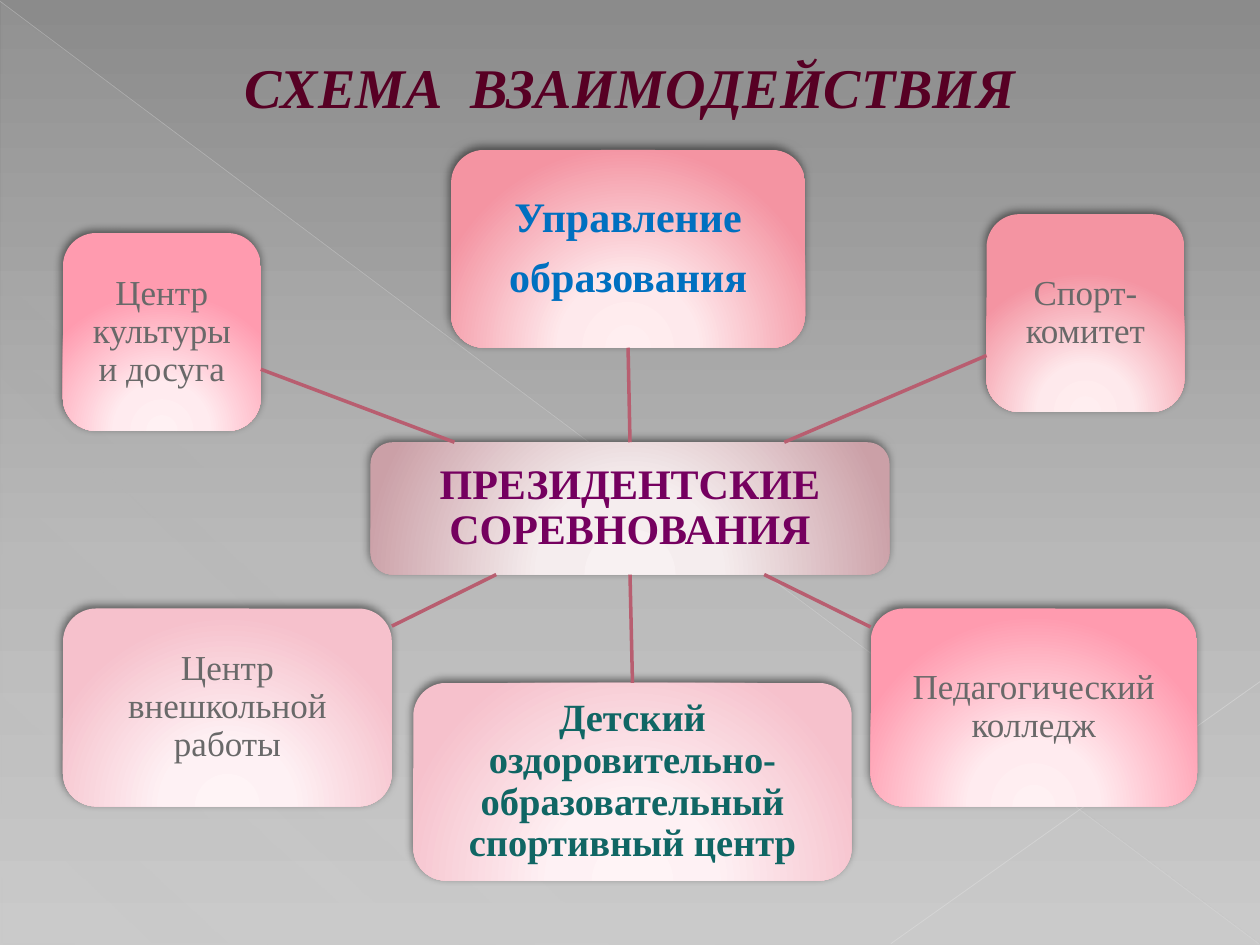
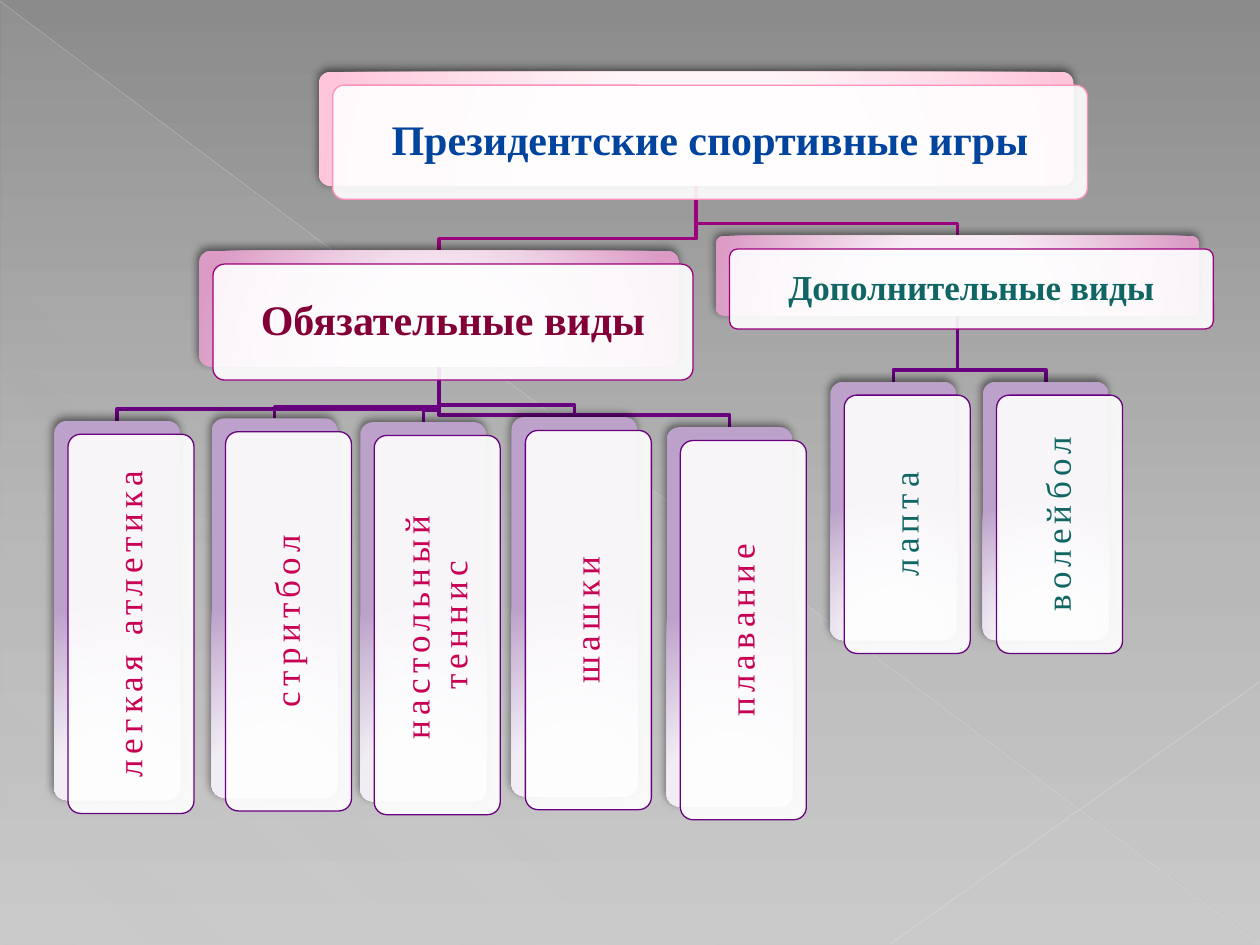
from dataclasses import dataclass

from lxml.etree import SubElement
from pptx import Presentation
from pptx.dml.color import RGBColor
from pptx.enum.shapes import MSO_CONNECTOR as Link, MSO_SHAPE as Preset
from pptx.enum.text import MSO_ANCHOR as Anchor, PP_ALIGN as Align
from pptx.oxml import parse_xml
from pptx.oxml.ns import nsdecls, qn
from pptx.util import Inches, Pt

SLIDE_W, SLIDE_H = Inches(10), Inches(7.5)
COLUMNS, ROWS = 100, 75
COL, ROW = SLIDE_W / COLUMNS, SLIDE_H / ROWS
FONT = "Times New Roman"

WHITE = RGBColor(0xFF, 0xFF, 0xFF)
BLACK = RGBColor(0, 0, 0)
GREY_TOP = RGBColor(0x8B, 0x8B, 0x8B)
GREY_MIDDLE = RGBColor(0xB8, 0xB8, 0xB8)
GREY_BOTTOM = RGBColor(0xCA, 0xCA, 0xCA)
VEIL = RGBColor(0xD2, 0xD2, 0xD2)
LONG_RAY = RGBColor(0xDF, 0xDF, 0xDF)
SHORT_RAY = RGBColor(0xE2, 0xE2, 0xE2)
TITLE_WINE = RGBColor(0x57, 0x00, 0x24)
TITLE_EDGE = RGBColor(0xB1, 0x64, 0x84)
SPOKE_ROSE = RGBColor(0xB8, 0x5E, 0x70)
TEXT_GREY = RGBColor(0x69, 0x69, 0x69)
HUB_PLUM = RGBColor(0x75, 0x00, 0x5F)
BLUE = RGBColor(0x00, 0x70, 0xC0)
TEAL = RGBColor(0x10, 0x66, 0x64)
NAVY = RGBColor(0x00, 0x44, 0x9E)
CLARET = RGBColor(0x82, 0x00, 0x37)
CRIMSON = RGBColor(0xC8, 0x00, 0x53)
ROOT_EDGE = RGBColor(0xFF, 0x90, 0xBE)
BRANCH_EDGE = RGBColor(0x9C, 0x00, 0x7F)
LEAF_EDGE = RGBColor(0x68, 0x00, 0x7F)


def glow(*hex_stops):
    return list(zip((0, 34, 100), map(RGBColor.from_string, hex_stops), (100,) * 3))


HUB_GLOW = glow("F8F1F2", "F5EDEE", "CBA0A7")
CORAL_GLOW = glow("FFEEF0", "FEE9EC", "F494A2")
PINK_GLOW = glow("FFF1F3", "FFEBEF", "FF9BAF")
PALE_GLOW = glow("FFF4F6", "FEF1F4", "F6C1CC")
ROOT_GLOW = glow("FFF7F9", "FFF4F7", "FFC6DB")
BRANCH_GLOW = glow("FBF0F7", "F8ECF4", "DB9BC5")
LEAF_GLOW = glow("F6F1F8", "F2EDF5", "BCA1CA")


@dataclass
class Box:
    """A rectangle in grid columns and rows."""
    left: float
    top: float
    width: float
    height: float

    @property
    def center(self):
        return self.left + self.width / 2, self.top + self.height / 2

    @property
    def bottom(self):
        return self.top + self.height

    def inside(self, area):
        return self.shifted(area.left, area.top)

    def shifted(self, dx, dy):
        return Box(self.left + dx, self.top + dy, self.width, self.height)

    def emu(self):
        return (*grid_point(self.left, self.top), *grid_point(self.width, self.height))

    def edge_toward(self, other):
        """Where the line to the other box's centre leaves this box."""
        (x, y), (other_x, other_y) = self.center, other.center
        dx, dy = other_x - x, other_y - y
        share = 1 / max(abs(dx) / (self.width / 2), abs(dy) / (self.height / 2))
        return x + dx * share, y + dy * share


@dataclass
class Label:
    lines: tuple
    size: int
    color: RGBColor
    bold: bool = False
    inset: float = 0.06
    upright: bool = False


def grid_point(column, row):
    return round(column * COL), round(row * ROW)


def gradient(stops, angle=None):
    """Linear gradient at an angle, or a circular one rising from below."""
    marks = "".join(
        f'<a:gs pos="{pos * 1000}"><a:srgbClr val="{color}">'
        f'<a:alpha val="{alpha * 1000}"/></a:srgbClr></a:gs>'
        for pos, color, alpha in stops)
    if angle is None:
        course = ('<a:path path="circle"><a:fillToRect l="50000" t="155000" '
                  'r="50000" b="-55000"/></a:path>')
    else:
        course = f'<a:lin ang="{angle * 60000}" scaled="0"/>'
    return parse_xml(f'<a:gradFill {nsdecls("a")} rotWithShape="1">'
                     f'<a:gsLst>{marks}</a:gsLst>{course}</a:gradFill>')


def fill_gradient(owner, part, stops, angle=None):
    """Fill a shape (part p:spPr) or a master background (part p:bgPr)."""
    owner.fill.background()
    return part.replace(part.find(qn("a:noFill")), gradient(stops, angle))


def set_opacity(part, percent):
    color = part.find(".//" + qn("a:srgbClr"))
    SubElement(color, qn("a:alpha"), val=str(percent * 1000))


def add_line(slide, start, end, color, width):
    line = slide.shapes.add_connector(Link.STRAIGHT, *grid_point(*start), *grid_point(*end))
    line.line.color.rgb = color
    line.line.width = Pt(width)
    SubElement(line.element.spPr, qn("a:effectLst"))
    return line


def add_glowing_panel(slide, box, stops, corner):
    panel = slide.shapes.add_shape(Preset.ROUNDED_RECTANGLE, *box.emu())
    panel.adjustments[0] = corner
    panel.line.fill.background()
    panel.shadow.inherit = False
    properties = panel.element.spPr
    fill_gradient(panel, properties, stops)
    shadow = SubElement(properties.find(qn("a:effectLst")), qn("a:outerShdw"),
                        blurRad=str(Pt(5)), dist=str(Pt(2)), dir=str(245 * 60000),
                        algn="ctr", rotWithShape="0")
    SubElement(shadow, qn("a:srgbClr"), val=str(BLACK))
    set_opacity(shadow, 50)
    return panel


def write_label(shape, label):
    frame = shape.text_frame
    frame.word_wrap = True
    frame.vertical_anchor = Anchor.MIDDLE
    frame.margin_left = frame.margin_right = Inches(label.inset)
    frame.margin_top = frame.margin_bottom = Inches(label.inset)
    if label.upright:
        frame._txBody.bodyPr.set("vert", "vert270")
    for number, line in enumerate(label.lines):
        paragraph = frame.add_paragraph() if number else frame.paragraphs[0]
        paragraph.alignment = Align.CENTER
        paragraph.line_spacing = 0.9
        paragraph.space_after = Pt(label.size * 0.35)
        run = paragraph.add_run()
        run.text = line
        font = run.font
        font.name, font.size, font.bold = FONT, Pt(label.size), label.bold
        font.color.rgb = label.color
        if label.upright:
            run._r.get_or_add_rPr().set("spc", "300")


def dress_master(master, slide):
    """Give the master its grey background, veil and rays, drawn by way of a slide."""
    background = master.background
    background.fill.background()
    fill_gradient(background, master.element.find(".//" + qn("p:bgPr")),
                  [(0, GREY_TOP, 100), (60, GREY_MIDDLE, 100), (100, GREY_BOTTOM, 100)], 90)
    veil = slide.shapes.add_shape(Preset.RIGHT_TRIANGLE, *Box(0.1, 0.2, 99.9, 74.8).emu())
    veil.line.fill.background()
    veil.shadow.inherit = False
    fill_gradient(veil, veil.element.spPr,
                  [(0, VEIL, 10), (70, VEIL, 8), (100, VEIL, 1)], 133)
    long_ray = add_line(slide, (0, 0.1), (99.9, 74.9), LONG_RAY, 0.39)
    short_ray = add_line(slide, (COLUMNS, 54.1), (70.7, 74.9), SHORT_RAY, 0.47)
    set_opacity(long_ray.element.spPr, 35)
    set_opacity(short_ray.element.spPr, 45)
    for number, decor in enumerate((veil, long_ray, short_ray)):
        decor.element.find(".//" + qn("p:cNvPr")).set("id", str(101 + number))
        master.shapes.element.insert(2 + number, decor.element)


def draw_title(slide, box, text):
    title = slide.shapes.title
    title.left, title.top, title.width, title.height = box.emu()
    title.text_frame.vertical_anchor = Anchor.MIDDLE
    paragraph = title.text_frame.paragraphs[0]
    paragraph.alignment = Align.CENTER
    run = paragraph.add_run()
    run.text = text
    font = run.font
    font.name, font.size, font.bold, font.italic = FONT, Pt(32), True, True
    font.color.rgb = TITLE_WINE
    run._r.get_or_add_rPr().insert(0, parse_xml(
        f'<a:ln {nsdecls("a")} w="{Pt(0.5)}"><a:solidFill>'
        f'<a:srgbClr val="{TITLE_EDGE}"/></a:solidFill></a:ln>'))


def draw_scheme(slide, area):
    """A hub with partners around it, each spoke aimed from centre to centre."""
    def add_node(box, stops, label):
        node = add_glowing_panel(slide, box, stops, 0.167)
        write_label(node, label)
        return node

    hub_box = Box(24.4, 23.2, 41.2, 10.5).inside(area)
    hub = add_node(hub_box, HUB_GLOW,
                   Label(("ПРЕЗИДЕНТСКИЕ СОРЕВНОВАНИЯ",), 24, HUB_PLUM, True, 0.07))
    side = 15.7
    partners = [
        (Box(30.8, 0, 28.1, side), CORAL_GLOW,
         Label(("Управление", "образования"), 24, BLUE, True, 0.07), (0, 2)),
        (Box(0, 6.6, side, side), PINK_GLOW,
         Label(("Центр культуры и досуга",), 20, TEXT_GREY), None),
        (Box(0, 36.4, 26.1, side), PALE_GLOW,
         Label(("Центр внешкольной работы",), 20, TEXT_GREY), None),
        (Box(27.8, 42.3, 34.8, side), PALE_GLOW,
         Label(("Детский оздоровительно-образовательный спортивный центр",),
               22, TEAL, True), (2, 0)),
        (Box(64.1, 36.4, 25.9, side), PINK_GLOW,
         Label(("Педагогический колледж",), 20, TEXT_GREY), None),
        (Box(73.3, 5.1, side, side), CORAL_GLOW,
         Label(("Спорт-комитет",), 20, TEXT_GREY), None),
    ]
    for place, stops, label, joined_sides in partners:
        box = place.inside(area)
        partner = add_node(box, stops, label)
        spoke = add_line(slide, hub_box.edge_toward(box), box.edge_toward(hub_box),
                         SPOKE_ROSE, 2)
        if joined_sides:
            hub_side, partner_side = joined_sides
            spoke.begin_connect(hub, hub_side)
            spoke.end_connect(partner, partner_side)


def draw_branch(slide, parent, child, color):
    """An elbow line from under the parent, turning just above the child."""
    (start_x, _), (end_x, _) = parent.center, child.center
    turn = child.top - 0.95
    start, *bends = [grid_point(*point) for point in (
        (start_x, parent.bottom), (start_x, turn), (end_x, turn), (end_x, child.top))]
    outline = slide.shapes.build_freeform(*start)
    outline.add_line_segments(bends, close=False)
    branch = outline.convert_to_shape()
    branch.fill.background()
    branch.line.color.rgb = color
    branch.line.width = Pt(2)
    branch.shadow.inherit = False


def draw_card(slide, box, stops, edge, label):
    add_glowing_panel(slide, box, stops, 0.1)
    card = slide.shapes.add_shape(Preset.ROUNDED_RECTANGLE, *box.shifted(1.1, 1.06).emu())
    card.adjustments[0] = 0.1
    card.fill.solid()
    card.fill.fore_color.rgb = WHITE
    set_opacity(card.element.spPr, 90)
    card.line.color.rgb = edge
    card.line.width = Pt(0.75)
    card.shadow.inherit = False
    write_label(card, label)


def draw_games_tree(slide, area):
    root = Box(21, 0, 59.9, 9.05).inside(area)
    required = Box(11.5, 14.2, 38.1, 9.2).inside(area)
    extra = Box(52.5, 13, 38.4, 6.35).inside(area)
    cards = [
        (root, ROOT_GLOW, ROOT_EDGE,
         Label(("Президентские спортивные игры",), 24, NAVY, True, 0.1)),
        (required, BRANCH_GLOW, BRANCH_EDGE,
         Label(("Обязательные виды",), 24, CLARET, True, 0.1)),
        (extra, BRANCH_GLOW, BRANCH_EDGE,
         Label(("Дополнительные виды",), 20, TEAL, True, 0.08)),
    ]
    branches = [(root, required, BRANCH_EDGE), (root, extra, BRANCH_EDGE)]
    sports = [
        (required, 30.1, CRIMSON, [
            ("легкая атлетика", 0, 27.7), ("стритбол", 12.5, 27.5),
            ("настольный теннис", 24.3, 27.8), ("шашки", 36.3, 27.4),
            ("плавание", 48.6, 28.2)]),
        (extra, 20.5, TEAL, [("лапта", 61.6, 24.6), ("волейбол", 73.7, 24.6)]),
    ]
    for parent, height, color, leaves in sports:
        for sport, left, top in leaves:
            leaf = Box(left, top, 10, height).inside(area)
            branches.append((parent, leaf, LEAF_EDGE))
            cards.append((leaf, LEAF_GLOW, LEAF_EDGE,
                          Label((sport,), 20, color, inset=0.08, upright=True)))
    for branch in branches:
        draw_branch(slide, *branch)
    for card in cards:
        draw_card(slide, *card)


def main():
    deck = Presentation()
    deck.slide_width, deck.slide_height = SLIDE_W, SLIDE_H
    title_only, blank = deck.slide_layouts[5], deck.slide_layouts[6]

    scheme = deck.slides.add_slide(title_only)
    dress_master(deck.slide_master, scheme)
    draw_title(scheme, Box(5, 2.9, 90, 7.8), "СХЕМА  ВЗАИМОДЕЙСТВИЯ")
    draw_scheme(scheme, Box(5, 11.9, 90, 58))

    games = deck.slides.add_slide(blank)
    draw_games_tree(games, Box(4.3, 5.7, 92, 59.4))
    deck.save("out.pptx")


if __name__ == "__main__":
    main()
